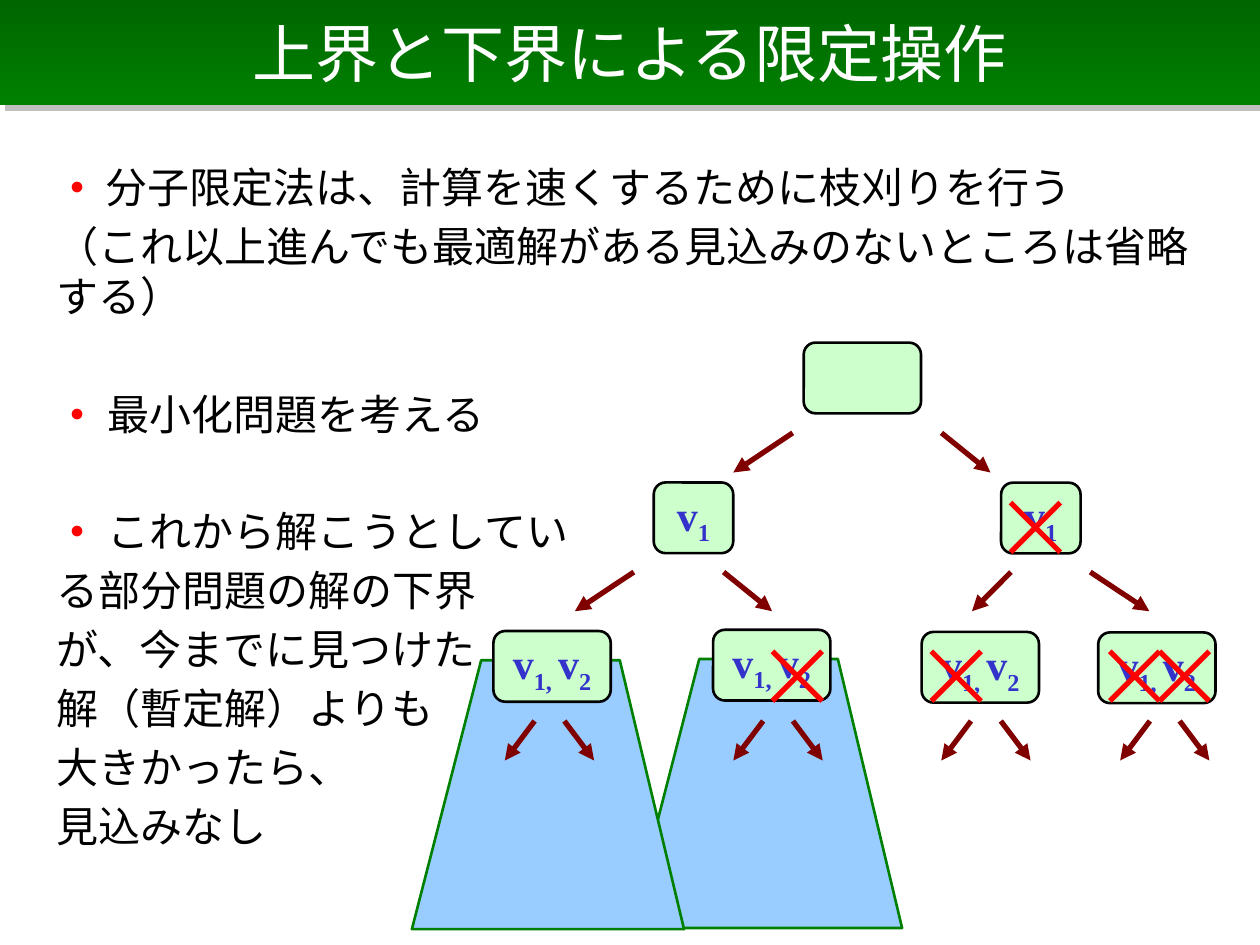
from lxml import etree
from pptx import Presentation
from pptx.dml.color import RGBColor
from pptx.enum.shapes import MSO_CONNECTOR as Connector, MSO_SHAPE as Shape
from pptx.enum.text import MSO_ANCHOR as Anchor, PP_ALIGN as Align
from pptx.oxml.ns import qn
from pptx.util import Pt

FONT = "Times New Roman"
TITLE = "上界と下界による限定操作"
LINE_GAP, SECTION_GAP = 4.9, 38.4
# (space before, bullet, text)
BODY = [
    (LINE_GAP, "•", "\t分子限定法は、計算を速くするために枝刈りを行う"),
    (LINE_GAP, "", "（これ以上進んでも最適解がある見込みのないところは省略する）"),
    (SECTION_GAP, "•", " 最小化問題を考える"),
    (SECTION_GAP, "• ", "これから解こうとしてい"),
    (LINE_GAP, "", "る部分問題の解の下界"),
    (LINE_GAP, "", "が、今までに見つけた"),
    (LINE_GAP, "", "解（暫定解）よりも"),
    (LINE_GAP, "", "大きかったら、"),
    (LINE_GAP, "", "見込みなし"),
]

SUBTREES = [(360, 376.6), (235.4, 377.3)]
SUBTREE_OUTLINE = [(39.6, 0), (0, 153.7), (155.5, 153.7), (118.8, 0)]

NODE_H, WIDE, NARROW = 40.4, 67, 45.4
ONE = [("v", False), ("1", True)]
BOTH = [("v", False), ("1, ", True), ("v", False), ("2", True)]
NODES = [  # left, top, width, label
    (459.3, 195.8, WIDE, []),
    (373.6, 275.7, NARROW, ONE), (572.1, 275.8, NARROW, ONE),
    (282, 360.6, WIDE, BOTH), (407.5, 359.9, WIDE, BOTH),
    (526.7, 361.1, WIDE, BOTH), (627.6, 361.4, WIDE, BOTH),
]
# (top, bottom, [(start x, end x), ...]) for each level of branches
BRANCHES = [
    (247.4, 270, [(453, 419), (538, 566)]),
    (326.9, 349.3, [(362.2, 328.5), (413.5, 441.2), (577.7, 555.4), (623, 656.8)]),
]
LEAF_CENTRES = [314, 444.6, 563.4, 665.6]
LEAF_BRANCHES = (412, 434.6, [(centre + side * 8.5, centre + side * 25.5)
                              for centre in LEAF_CENTRES for side in (-1, 1)])
CROSS = 28.4
CROSSES = [(577.5, 287.2), (441.4, 372.2), (532.2, 372.2), (634.2, 372.2), (662.6, 372.2)]


def color(code):
    return RGBColor.from_string(code)


def style_run(run, size, code, bold=False):
    run.font.name = FONT
    run.font.size = Pt(size)
    run.font.bold = bold
    run.font.color.rgb = color(code)


def paint(shape, fill, line):
    shape.shadow.inherit = False
    shape.fill.solid()
    shape.fill.fore_color.rgb = color(fill)
    shape.line.color.rgb = color(line)
    shape.line.width = Pt(1.5)


def add_title(slide):
    banner = slide.shapes.add_shape(Shape.RECTANGLE, 0, 0, Pt(720), Pt(60.2))
    banner.shadow.inherit = False
    effects = banner._element.spPr.find(qn("a:effectLst"))
    shadow = etree.SubElement(effects, qn("a:outerShdw"), dist=str(Pt(4.2)), dir="2700000")
    tint = etree.SubElement(shadow, qn("a:srgbClr"), val="808080")
    etree.SubElement(tint, qn("a:alpha"), val="50000")
    banner.fill.gradient()
    banner.fill.gradient_angle = 270
    for stop, code in zip(banner.fill.gradient_stops, ("006600", "008000")):
        stop.color.rgb = color(code)
    for position, stop in zip((0, 1), banner.fill.gradient_stops):
        stop.position = position
    banner.line.fill.background()
    banner.text_frame.text = TITLE
    banner.text_frame.vertical_anchor = Anchor.MIDDLE
    heading = banner.text_frame.paragraphs[0]
    heading.alignment = Align.CENTER
    style_run(heading.runs[0], 36, "FFFFFF")


def add_body(slide):
    frame = slide.shapes.add_textbox(Pt(25.2), Pt(88.6), Pt(674.6), Pt(419.8)).text_frame
    frame.word_wrap = True
    for index, (gap, bullet, text) in enumerate(BODY):
        paragraph = frame.add_paragraph() if index else frame.paragraphs[0]
        paragraph.space_before = Pt(gap)
        if "\t" in text:
            tabs = etree.SubElement(paragraph._p.get_or_add_pPr(), qn("a:tabLst"))
            etree.SubElement(tabs, qn("a:tab"), pos=str(Pt(28)), algn="l")
        for part, code, bold in ((bullet, "FF0000", True), (text, "000000", False)):
            if part:
                run = paragraph.add_run()
                run.text = part
                style_run(run, 24, code, bold)


def add_subtree(slide, left, top):
    corners = [(Pt(left + x), Pt(top + y)) for x, y in SUBTREE_OUTLINE]
    builder = slide.shapes.build_freeform(*corners[0])
    builder.add_line_segments(corners[1:], close=True)
    paint(builder.convert_to_shape(), "99CCFF", "008000")


def add_node(slide, left, top, width, label):
    node = slide.shapes.add_shape(Shape.ROUNDED_RECTANGLE, Pt(left), Pt(top), Pt(width), Pt(NODE_H))
    paint(node, "CCFFCC", "000000")
    frame = node.text_frame
    frame.word_wrap = False
    frame.vertical_anchor = Anchor.MIDDLE
    paragraph = frame.paragraphs[0]
    paragraph.alignment = Align.CENTER
    for part, subscript in label:
        run = paragraph.add_run()
        run.text = part
        style_run(run, 24, "3333CC", True)
        if subscript:
            run.font._element.set("baseline", "-25000")


def add_line(slide, x1, y1, x2, y2, code, arrow=False):
    line = slide.shapes.add_connector(Connector.STRAIGHT, Pt(x1), Pt(y1), Pt(x2), Pt(y2))
    line.line.color.rgb = color(code)
    line.line.width = Pt(3)
    if arrow:
        etree.SubElement(line.line._get_or_add_ln(), qn("a:tailEnd"), type="triangle")
    etree.SubElement(line._element.spPr, qn("a:effectLst"))


def main():
    deck = Presentation()
    deck.slide_width, deck.slide_height = Pt(720), Pt(540)
    slide = deck.slides.add_slide(deck.slide_layouts[6])
    add_title(slide)
    add_body(slide)
    for subtree in SUBTREES:
        add_subtree(slide, *subtree)
    for node in NODES:
        add_node(slide, *node)
    for top, bottom, spans in BRANCHES + [LEAF_BRANCHES]:
        for start, end in spans:
            add_line(slide, start, top, end, bottom, "800000", arrow=True)
    for left, top in CROSSES:
        right, bottom = left + CROSS, top + CROSS
        add_line(slide, right, top, left, bottom, "FF0000")
        add_line(slide, right, bottom, left, top, "FF0000")
    deck.save("out.pptx")


if __name__ == "__main__":
    main()
